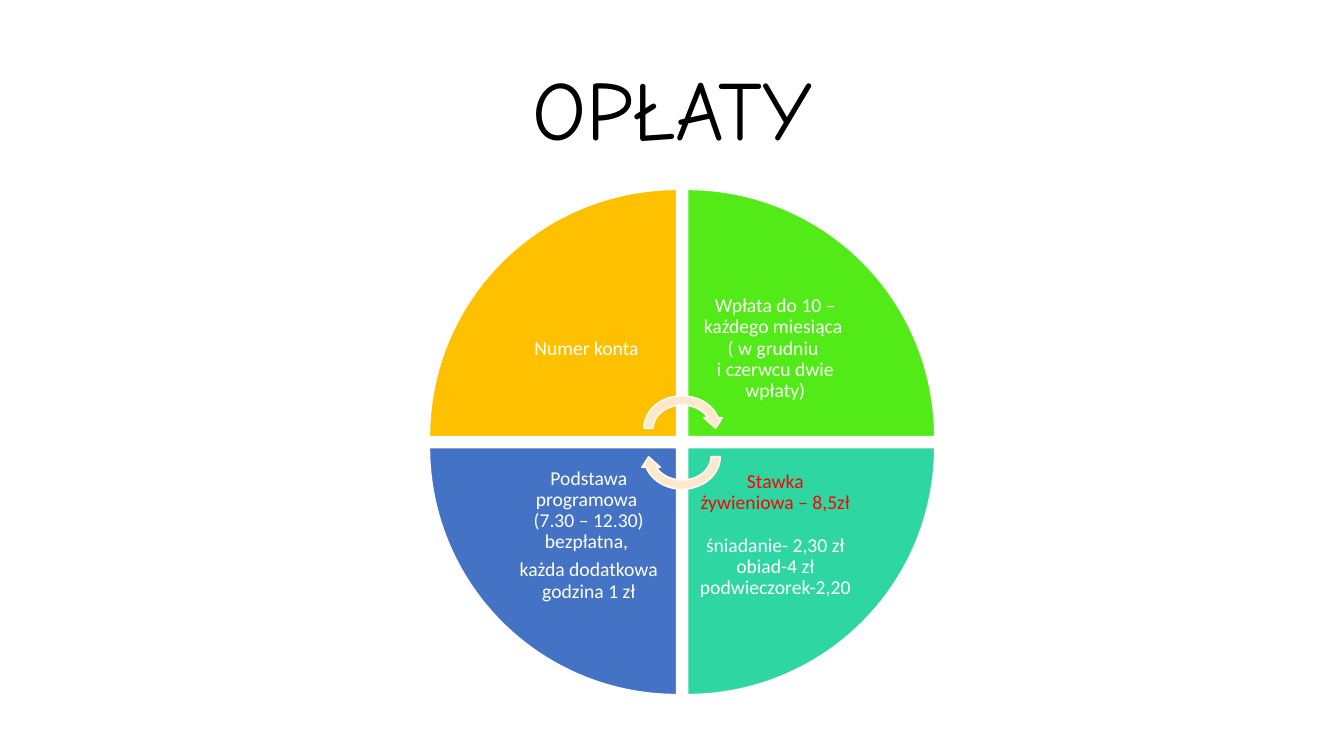
from pptx import Presentation
from pptx.dml.color import RGBColor
from pptx.enum.shapes import MSO_SHAPE as Shape
from pptx.enum.text import MSO_ANCHOR as Anchor, PP_ALIGN as Align
from pptx.oxml.ns import qn
from pptx.util import Inches, Pt
from lxml import etree

LEFT, TOP = 4.26, 1.88
STEP = 2.56
SIDE = 2.45
INNER = 1.74
WHITE = "FFFFFF"
RED = "FF0000"

PARTS = [
    (0, 0, "FFC000", ["Numer konta "], WHITE),
    (1, 0, "53EB17",
     ["Wpłata do 10 – każdego miesiąca \v( w grudniu \vi czerwcu dwie wpłaty)"],
     WHITE),
    (1, 1, "2ED7A1",
     ["Stawka żywieniowa – 8,5zł \vśniadanie- 2,30 zł\vobiad-4 zł\vpodwieczorek-2,20"],
     RED),
    (0, 1, "4472C4",
     ["Podstawa programowa \v(7.30 – 12.30) bezpłatna, ",
      "każda dodatkowa godzina 1 zł"], WHITE),
]


def color(code):
    """Turn a hex string into a colour."""
    return RGBColor.from_string(code)


def add_form(group, kind, box, turn, fill):
    """Add a filled preset shape with a thin white outline."""
    form = group.shapes.add_shape(kind, *map(Inches, box))
    form.shadow.inherit = False
    form.rotation = turn
    form.fill.solid()
    form.fill.fore_color.rgb = color(fill)
    form.line.color.rgb = color(WHITE)
    form.line.width = Pt(1)


def add_text(shapes, box, lines, face, size, code, lead=None, inset=None, after=0):
    """Add centred text; lead colours the first run of each paragraph."""
    frame = shapes.add_textbox(*map(Inches, box)).text_frame
    frame.word_wrap = True
    frame.vertical_anchor = Anchor.MIDDLE
    if inset is not None:
        frame.margin_left = frame.margin_right = Inches(inset)
        frame.margin_top = frame.margin_bottom = Inches(inset)
    frame.text = "\n".join(lines)
    for para in frame.paragraphs:
        para.alignment = Align.CENTER
        para.line_spacing = 0.9
        para.space_after = Pt(after)
        for run in para.runs:
            run.font.name = face
            run.font.size = Pt(size)
            run.font.color.rgb = color(code)
        if lead:
            para.runs[0].font.color.rgb = color(lead)
        for stop in para._p.findall(qn("a:br")):
            etree.SubElement(stop, qn("a:rPr")).set("sz", str(size * 100))


def add_part(group, col, row, turn, fill, lines, lead):
    """Add one quarter of the circle with its text near the centre."""
    left, top = LEFT + col * STEP, TOP + row * STEP
    add_form(group, Shape.PIE_WEDGE, (left, top, SIDE, SIDE), turn, fill)
    shift = SIDE - INNER
    box = (left + shift * (1 - col), top + shift * (1 - row), INNER, INNER)
    add_text(group.shapes, box, lines, "Calibri", 14, WHITE, lead, 0.11, 4.9)


def main():
    """Build the fees slide."""
    deck = Presentation()
    deck.slide_width, deck.slide_height = Inches(13.33), Inches(7.5)
    slide = deck.slides.add_slide(deck.slide_layouts[6])
    add_text(slide.shapes, (0.92, 0.4, 11.5, 1.45), ["OPŁATY"],
             "Comic Neue", 60, "000000")
    wheel = slide.shapes.add_group_shape()
    for turn, (col, row, fill, lines, lead) in enumerate(PARTS):
        add_part(wheel, col, row, turn * 90, fill, lines, lead)
    for top, turn in ((3.88, 0), (4.16, 180)):
        add_form(wheel, Shape.CIRCULAR_ARROW, (6.34, top, 0.85, 0.74), turn, "FFE8CC")
    deck.save("out.pptx")


if __name__ == "__main__":
    main()
